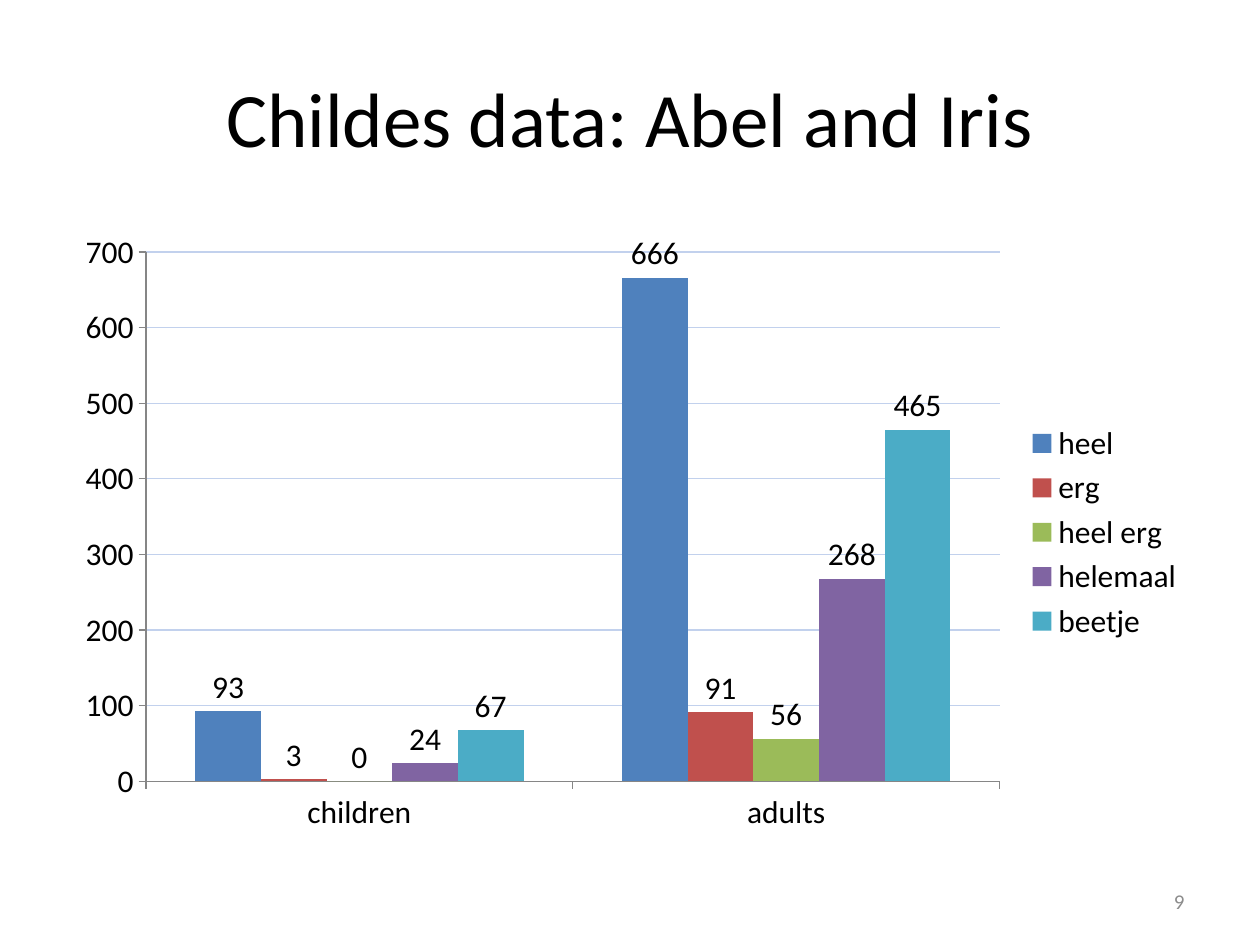
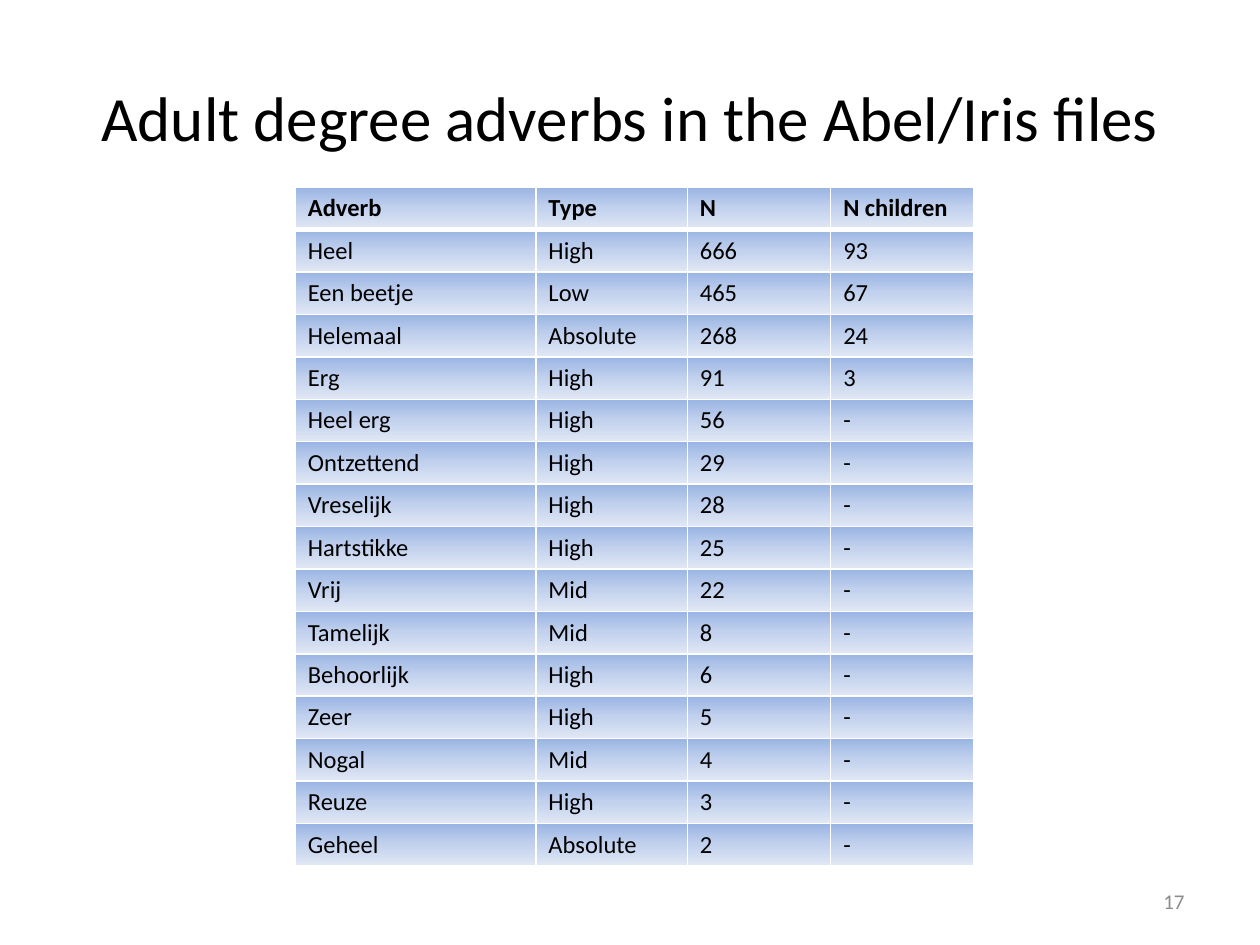
"""Build two slides on degree adverbs: a clustered column chart and a table."""
from lxml import etree
from pptx import Presentation
from pptx.chart.data import CategoryChartData
from pptx.dml.color import RGBColor
from pptx.enum.chart import XL_CHART_TYPE as Chart, XL_LABEL_POSITION as LabelPos
from pptx.enum.chart import XL_LEGEND_POSITION as LegendPos, XL_TICK_MARK as Tick
from pptx.enum.text import MSO_ANCHOR as Anchor, PP_ALIGN as Align
from pptx.oxml.ns import qn
from pptx.util import Pt

FONT = "Calibri"
COLORS = {"text": "000000", "number": "8C8C8C", "grid": "C2D1ED", "axis": "868686",
          "border": "FFFFFF", "top": "9AB5E4", "middle": "C2D1ED", "bottom": "E1E8F5",
          "heel": "4F81BD", "erg": "C0504D", "heel erg": "9BBB59",
          "helemaal": "8064A2", "beetje": "4BACC6"}
TITLE_BOX = (36, 21.6, 648, 90)
NUMBER_BOX = (516, 500.5, 168, 28.75)
CHART_BOX = (36, 126, 648, 356.4)
TABLE_AT = (168.75, 107)
COLUMN_WIDTHS = (137.5, 86.5, 82, 82)
ROW_HEIGHT = 24.25

GROUPS = ("children", "adults")
COUNTS = {"heel": (93, 666), "erg": (3, 91), "heel erg": (0, 56),
          "helemaal": (24, 268), "beetje": (67, 465)}
ADVERBS = [
    ("Adverb", "Type", "N", "N children"),
    ("Heel", "High", "666", "93"),
    ("Een beetje", "Low", "465", "67"),
    ("Helemaal", "Absolute", "268", "24"),
    ("Erg", "High", "91", "3"),
    ("Heel erg", "High", "56", "-"),
    ("Ontzettend", "High", "29", "-"),
    ("Vreselijk", "High", "28", "-"),
    ("Hartstikke", "High", "25", "-"),
    ("Vrij", "Mid", "22", "-"),
    ("Tamelijk", "Mid", "8", "-"),
    ("Behoorlijk", "High", "6", "-"),
    ("Zeer", "High", "5", "-"),
    ("Nogal", "Mid", "4", "-"),
    ("Reuze", "High", "3", "-"),
    ("Geheel", "Absolute", "2", "-"),
]


def color(name):
    return RGBColor.from_string(COLORS[name])


def points(values):
    return [Pt(v) for v in values]


def set_attrs(target, **values):
    for name, value in values.items():
        setattr(target, name, value)


def style_font(font, size, name="text", bold=False):
    set_attrs(font, name=FONT, size=Pt(size), bold=bold)
    font.color.rgb = color(name)


def style_line(line, name, width=0.75):
    line.color.rgb = color(name)
    line.width = Pt(width)


def write(tf, text, size, align, name="text", bold=False):
    set_attrs(tf, word_wrap=True, vertical_anchor=Anchor.MIDDLE)
    p = tf.paragraphs[0]
    p.alignment = align
    r = p.add_run()
    r.text = text
    style_font(r.font, size, name, bold)


def add_slide(prs, title, size, number):
    s = prs.slides.add_slide(prs.slide_layouts[5])
    sp = s.shapes.title
    set_attrs(sp, **dict(zip(("left", "top", "width", "height"), points(TITLE_BOX))))
    write(sp.text_frame, title, size, Align.CENTER)
    box = s.shapes.add_textbox(*points(NUMBER_BOX))
    write(box.text_frame, str(number), 12, Align.RIGHT, "number")
    return s


def add_counts_chart(s):
    data = CategoryChartData()
    data.categories = GROUPS
    for adverb, values in COUNTS.items():
        data.add_series(adverb, values)
    chart = s.shapes.add_chart(Chart.COLUMN_CLUSTERED, *points(CHART_BOX), data).chart
    style_font(chart.font, 18)
    set_attrs(chart, has_title=False, has_legend=True)
    set_attrs(chart.legend, position=LegendPos.RIGHT, include_in_layout=False)
    for axis in (chart.category_axis, chart.value_axis):
        axis.major_tick_mark = Tick.OUTSIDE
        style_line(axis.format.line, "axis")
    set_attrs(chart.value_axis, minimum_scale=0, maximum_scale=700, major_unit=100)
    style_line(chart.value_axis.major_gridlines.format.line, "grid")
    plot = chart.plots[0]
    set_attrs(plot, gap_width=150, overlap=0, vary_by_categories=False, has_data_labels=True)
    set_attrs(plot.data_labels, show_value=True, position=LabelPos.OUTSIDE_END)
    for series in plot.series:
        series.format.fill.solid()
        series.format.fill.fore_color.rgb = color(series.name)


def add_color(parent, name):
    etree.SubElement(parent, qn("a:srgbClr"), val=COLORS[name])


def style_cell(cell, top_width, bottom_width):
    tc_pr = cell._tc.get_or_add_tcPr()
    for side, width in (("L", 1), ("R", 1), ("T", top_width), ("B", bottom_width)):
        line = etree.SubElement(tc_pr, qn(f"a:ln{side}"), w=str(Pt(width)))
        add_color(etree.SubElement(line, qn("a:solidFill")), "border")
    gradient = etree.SubElement(tc_pr, qn("a:gradFill"))
    stops = etree.SubElement(gradient, qn("a:gsLst"))
    for percent, name in ((0, "top"), (50, "middle"), (100, "bottom")):
        add_color(etree.SubElement(stops, qn("a:gs"), pos=str(percent * 1000)), name)
    etree.SubElement(gradient, qn("a:lin"), ang=str(90 * 60000), scaled="0")


def add_adverb_table(s):
    size = (sum(COLUMN_WIDTHS), ROW_HEIGHT * len(ADVERBS))
    table = s.shapes.add_table(len(ADVERBS), len(COLUMN_WIDTHS),
                               *points(TABLE_AT + size)).table
    for column, width in zip(table.columns, COLUMN_WIDTHS):
        column.width = Pt(width)
    for i, row in enumerate(ADVERBS):
        table.rows[i].height = Pt(ROW_HEIGHT)
        for j, text in enumerate(row):
            cell = table.cell(i, j)
            write(cell.text_frame, text, 14, Align.LEFT, bold=i == 0)
            style_cell(cell, 3 if i == 1 else 1, 3 if i == 0 else 1)


def main():
    prs = Presentation()
    set_attrs(prs, slide_width=Pt(720), slide_height=Pt(540))
    add_counts_chart(add_slide(prs, "Childes data: Abel and Iris", 44, 9))
    add_adverb_table(add_slide(prs, "Adult degree adverbs in the Abel/Iris files", 36, 17))
    prs.save("out.pptx")


if __name__ == "__main__":
    main()
